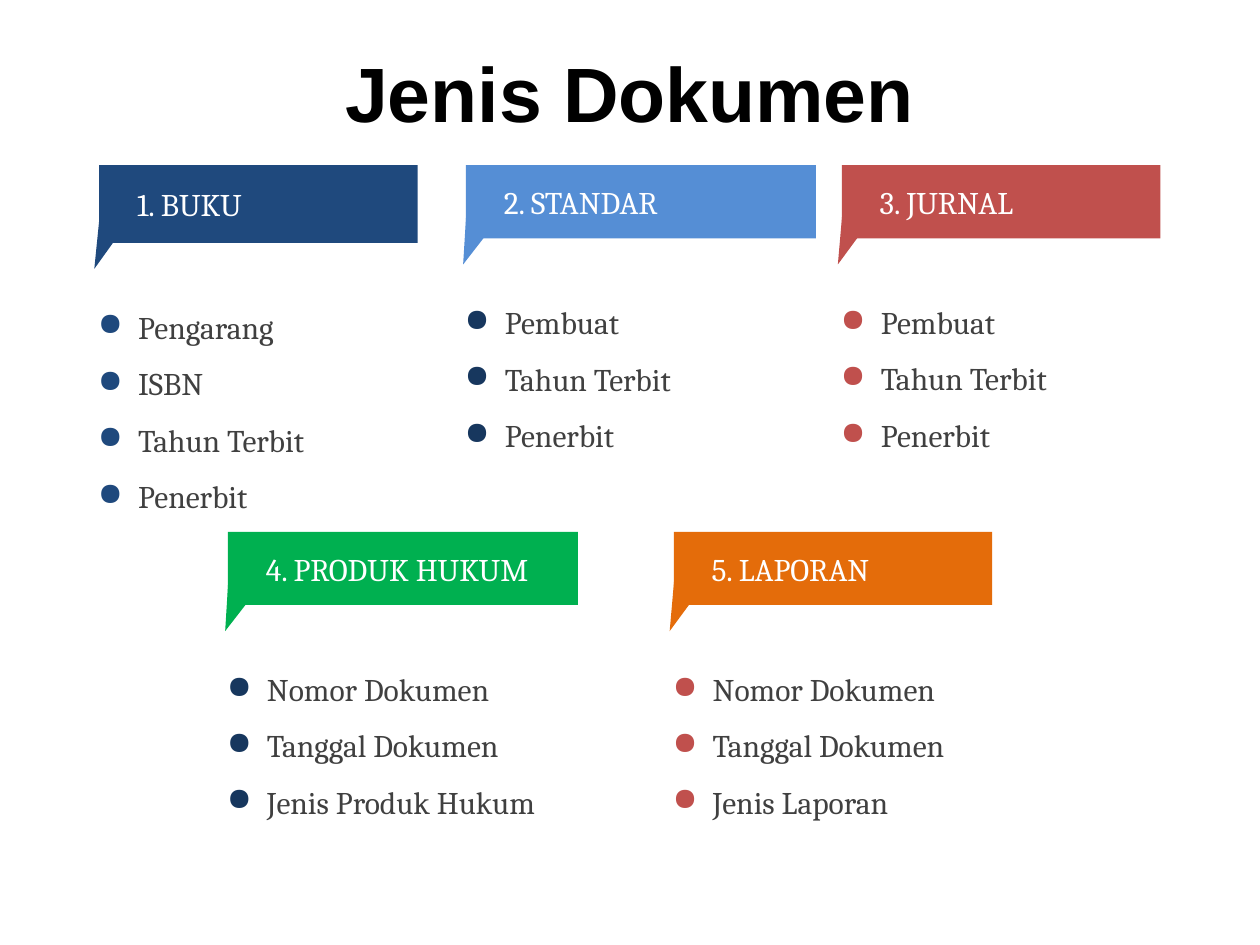
from dataclasses import dataclass

import pptx
import pptx.dml.color
import pptx.enum.shapes
import pptx.enum.text
import pptx.oxml.ns
import pptx.util
from lxml import etree

Pt = pptx.util.Pt
Shapes = pptx.enum.shapes.MSO_SHAPE


@dataclass(frozen=True)
class Theme:
    title_font: str = "Arial"
    body_font: str = "Cambria"
    title_size: float = 44
    body_size: float = 18
    black: str = "000000"
    white: str = "FFFFFF"
    grey: str = "404040"
    navy: str = "1F497D"
    dark_navy: str = "17375E"
    blue: str = "558ED5"
    red: str = "C0504D"
    green: str = "00B050"
    orange: str = "E46C0A"


@dataclass(frozen=True)
class Card:
    """One document type; lengths are in points."""
    heading: str
    items: tuple[str, ...]
    left: float
    top: float
    width: float
    list_height: float
    fill: str
    bullet: str
    height: float = 41.8


THEME = Theme()
TOP_ROW, BOTTOM_ROW = 94.4, 303.9
NARROW, WIDE = 182, 200
PUBLISHED = ("Pembuat", "Tahun Terbit", "Penerbit")
NUMBERED = ("Nomor Dokumen", "Tanggal Dokumen")
CARDS = (
    Card("2. STANDAR", PUBLISHED, 266.3, TOP_ROW, WIDE, 135,
         THEME.blue, THEME.dark_navy),
    Card("3. JURNAL", PUBLISHED, 481.1, TOP_ROW, NARROW, 124,
         THEME.red, THEME.red),
    Card("4. PRODUK HUKUM", NUMBERED + ("Jenis Produk Hukum",), 130.3,
         BOTTOM_ROW, WIDE, 135, THEME.green, THEME.dark_navy),
    Card("5. LAPORAN", NUMBERED + ("Jenis Laporan",), 385, BOTTOM_ROW, NARROW,
         124, THEME.orange, THEME.red),
    Card("1. BUKU", ("Pengarang", "ISBN", "Tahun Terbit", "Penerbit"), 56.7,
         TOP_ROW, NARROW, 143, THEME.navy, THEME.navy, 44.4),
)


def rgb(color: str) -> pptx.dml.color.RGBColor:
    return pptx.dml.color.RGBColor.from_string(color)


def set_font(paragraph, name: str, size: float, color: str, bold: bool = False) -> None:
    font = paragraph.font
    font.name, font.size, font.bold = name, Pt(size), bold
    font.color.rgb = rgb(color)


def add_bullet(paragraph, color: str, indent: float) -> None:
    qn = pptx.oxml.ns.qn
    properties = paragraph._p.get_or_add_pPr()
    properties.set("marL", str(Pt(indent)))
    properties.set("indent", str(-Pt(indent)))
    bullet_color = etree.SubElement(properties, qn("a:buClr"))
    etree.SubElement(bullet_color, qn("a:srgbClr"), val=color)
    etree.SubElement(properties, qn("a:buChar"), char="●")


def add_filled(shapes, kind, left: float, top: float, width: float,
               height: float, fill: str):
    shape = shapes.add_shape(kind, Pt(left), Pt(top), Pt(width), Pt(height))
    shape.shadow.inherit = False
    shape.fill.solid()
    shape.fill.fore_color.rgb = rgb(fill)
    shape.line.fill.background()
    return shape


def add_list(shapes, card: Card) -> None:
    box = shapes.add_textbox(
        Pt(card.left - 7.8), Pt(card.top + card.height + 27),
        Pt(1.105 * card.width), Pt(card.list_height))
    frame = box.text_frame
    frame.word_wrap = True
    frame.text = "\n".join(card.items)
    for index, paragraph in enumerate(frame.paragraphs):
        add_bullet(paragraph, card.bullet, 23)
        paragraph.line_spacing = 1.3
        paragraph.space_before = Pt(4.2 if index else 0)
        set_font(paragraph, THEME.body_font, THEME.body_size, THEME.grey)


def add_banner(shapes, card: Card) -> None:
    """Draw the heading bar with its slanted tail behind it."""
    tail = add_filled(shapes, Shapes.ISOSCELES_TRIANGLE,
                      card.left - 0.0425 * card.width, card.top + 6.5,
                      0.16 * card.width, card.height + 10.1, card.fill)
    tail.rotation = 200.7
    bar = add_filled(shapes, Shapes.RECTANGLE, card.left, card.top,
                     card.width, card.height, card.fill)
    frame = bar.text_frame
    frame.word_wrap = True
    frame.vertical_anchor = pptx.enum.text.MSO_ANCHOR.MIDDLE
    frame.margin_left = Pt(21.6)
    frame.text = card.heading
    paragraph = frame.paragraphs[0]
    paragraph.alignment = pptx.enum.text.PP_ALIGN.LEFT
    set_font(paragraph, THEME.body_font, THEME.body_size, THEME.white)


def add_title(slide, text: str) -> None:
    box = slide.shapes.add_textbox(Pt(36), Pt(21.6), Pt(648), Pt(61.2))
    frame = box.text_frame
    frame.word_wrap = True
    frame.vertical_anchor = pptx.enum.text.MSO_ANCHOR.MIDDLE
    frame.text = text
    paragraph = frame.paragraphs[0]
    paragraph.alignment = pptx.enum.text.PP_ALIGN.CENTER
    set_font(paragraph, THEME.title_font, THEME.title_size, THEME.black, True)


def main() -> None:
    presentation = pptx.Presentation()
    presentation.slide_width, presentation.slide_height = Pt(720), Pt(540)
    slide = presentation.slides.add_slide(presentation.slide_layouts[6])
    add_title(slide, "Jenis Dokumen")
    for card in CARDS:
        group = slide.shapes.add_group_shape()
        add_list(group.shapes, card)
        add_banner(group.shapes, card)
    presentation.save("out.pptx")


if __name__ == "__main__":
    main()
